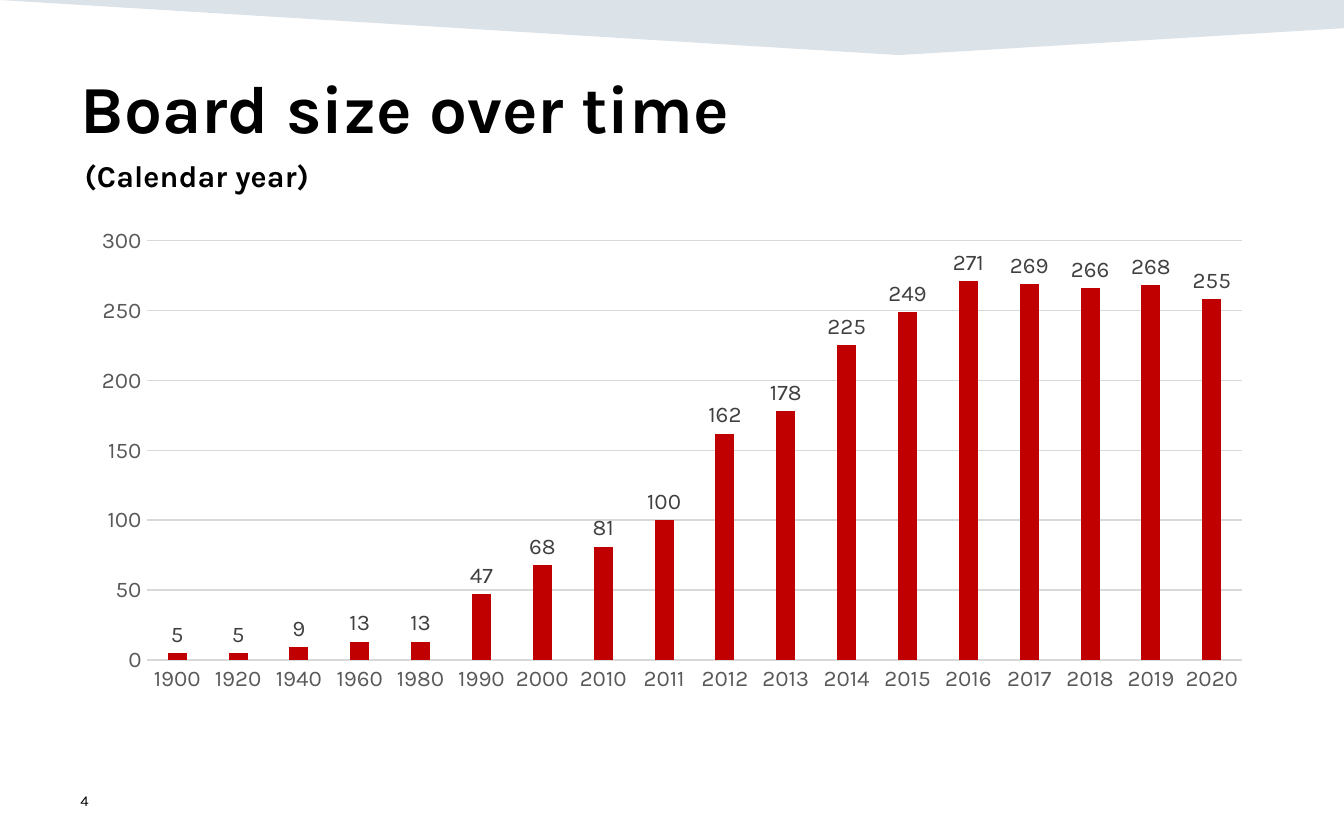
from lxml import etree
from pptx import Presentation
from pptx.chart.data import CategoryChartData
from pptx.dml.color import RGBColor
from pptx.enum.chart import XL_CHART_TYPE, XL_LABEL_POSITION, XL_TICK_MARK
from pptx.enum.text import MSO_ANCHOR, PP_ALIGN
from pptx.oxml.ns import qn
from pptx.util import Inches, Pt

FONT = "Karla"
BLACK = RGBColor(0x00, 0x00, 0x00)
NAVY = RGBColor(0x16, 0x44, 0x69)
RED = RGBColor(0xC0, 0x00, 0x00)
GRID = RGBColor(0xD9, 0xD9, 0xD9)
AXIS_TEXT = RGBColor(0x59, 0x59, 0x59)
LABEL_TEXT = RGBColor(0x40, 0x40, 0x40)

TITLE = "Board size over time"
SUBTITLE = "(Calendar year)"
PAGE_NUMBER = "4"
BOARD_SIZE = {
    "1900": 5, "1920": 5, "1940": 9, "1960": 13, "1980": 13, "1990": 47,
    "2000": 68, "2010": 81, "2011": 100, "2012": 162, "2013": 178, "2014": 225,
    "2015": 249, "2016": 271, "2017": 269, "2018": 266, "2019": 268, "2020": 258,
}
LABEL_OVERRIDES = {"2020": "255"}  # label differs from the plotted value
BANNER = [(0, 0), (10, 0), (10, 0.21), (6.69, 0.41)]


def style_font(font, size, color, bold=False):
    font.name = FONT
    font.size = Pt(size)
    font.bold = bold
    font.color.rgb = color


def place(shape, left, top, width, height):
    shape.left, shape.top = Inches(left), Inches(top)
    shape.width, shape.height = Inches(width), Inches(height)


def write(shape, text, size, bold=False, anchor=MSO_ANCHOR.TOP):
    tf = shape.text_frame
    tf.word_wrap = True
    tf.vertical_anchor = anchor
    p = tf.paragraphs[0]
    p.alignment = PP_ALIGN.LEFT
    r = p.add_run()
    r.text = text
    style_font(r.font, size, BLACK, bold)
    return tf, p, r


def add_banner(s):
    points = [(Inches(x), Inches(y)) for x, y in BANNER]
    builder = s.shapes.build_freeform(*points[0], scale=1.0)
    builder.add_line_segments(points[1:], close=True)
    sp = builder.convert_to_shape()
    sp.shadow.inherit = False
    sp.line.fill.background()
    sp.fill.solid()
    sp.fill.fore_color.rgb = NAVY
    color = sp.fill._xPr.find(qn("a:solidFill")).find(qn("a:srgbClr"))
    etree.SubElement(color, qn("a:alpha")).set("val", "15000")


def add_board_chart(s):
    data = CategoryChartData()
    data.categories = list(BOARD_SIZE)
    data.add_series("Series 1", list(BOARD_SIZE.values()))
    chart = s.shapes.add_chart(
        XL_CHART_TYPE.COLUMN_CLUSTERED,
        Inches(0.58), Inches(1.62), Inches(8.84), Inches(3.6), data).chart
    chart.has_legend = False
    chart.has_title = False
    style_font(chart.font, 10, BLACK)

    years, sizes = chart.category_axis, chart.value_axis
    for axis in (years, sizes):
        axis.major_tick_mark = axis.minor_tick_mark = XL_TICK_MARK.NONE
        style_font(axis.tick_labels.font, 12, AXIS_TEXT)
    sizes.minimum_scale, sizes.maximum_scale, sizes.major_unit = 0, 300, 50
    sizes.format.line.fill.background()
    for line in (years.format.line, sizes.major_gridlines.format.line):
        line.color.rgb = GRID
        line.width = Pt(0.75)

    plot = chart.plots[0]
    plot.gap_width, plot.overlap = 219, -27
    plot.vary_by_categories = False
    series = plot.series[0]
    series.format.fill.solid()
    series.format.fill.fore_color.rgb = RED
    series.invert_if_negative = False
    labels = series.data_labels
    labels.show_value = True
    labels.position = XL_LABEL_POSITION.OUTSIDE_END
    style_font(labels.font, 12, LABEL_TEXT)
    for year, text in LABEL_OVERRIDES.items():
        label = series.points[list(BOARD_SIZE).index(year)].data_label
        r = label.text_frame.paragraphs[0].add_run()
        r.text = text
        style_font(r.font, 12, LABEL_TEXT)
        label.position = XL_LABEL_POSITION.OUTSIDE_END


def main():
    prs = Presentation()
    prs.slide_width, prs.slide_height = Inches(10), Inches(6.25)
    s = prs.slides.add_slide(prs.slide_layouts[5])
    add_banner(s)

    title = s.shapes.title
    place(title, 0.5, 0.44, 9, 0.95)
    write(title, TITLE, 36, bold=True)

    subtitle = s.shapes.add_textbox(
        Inches(0.63), Inches(1.17), Inches(1.69), Inches(0.27))
    tf, p, r = write(subtitle, SUBTITLE, 16.2, bold=True)
    tf.margin_left = tf.margin_top = tf.margin_right = tf.margin_bottom = 0
    p.line_spacing = Pt(19.3)
    r.font._element.set("spc", "10")

    add_board_chart(s)

    number = s.shapes.add_textbox(
        Inches(0.5), Inches(5.79), Inches(2.25), Inches(0.33))
    write(number, PAGE_NUMBER, 8, anchor=MSO_ANCHOR.MIDDLE)

    prs.save("out.pptx")


if __name__ == "__main__":
    main()
